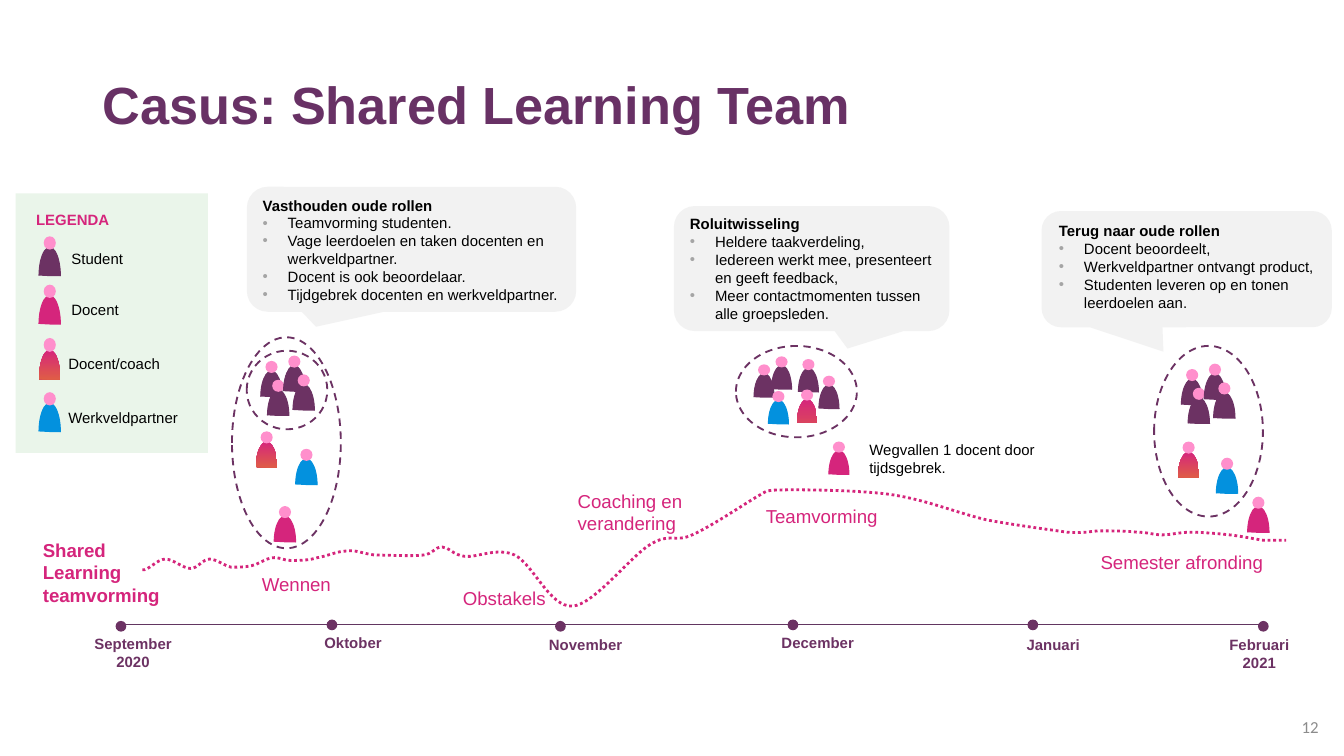
"""Build the Shared Learning Team case slide with its timeline, teams and legend."""
import copy

import lxml.etree
import pptx
import pptx.dml.color
import pptx.enum.dml
import pptx.enum.shapes
import pptx.enum.text
import pptx.oxml.ns
import pptx.util

COLORS = {
    "title": "683165", "plum": "6C3263", "axis": "623661", "pink": "D5257C",
    "coral": "DF5C47", "amber": "E99211", "blue": "0391DE", "head": "FF8FCC",
    "callout": "F2F2F2", "legend": "EAF5EA", "black": "000000",
    "bullet": "A5A5A5", "number": "8C8C8C",
}
RGB = {name: pptx.dml.color.RGBColor.from_string(value) for name, value in COLORS.items()}
SHAPES = pptx.enum.shapes.MSO_SHAPE
ALIGN = pptx.enum.text.PP_ALIGN
DASH = pptx.enum.dml.MSO_LINE

presentation = pptx.Presentation()
presentation.slide_width = pptx.util.Inches(10)
presentation.slide_height = pptx.util.Inches(5.625)
slide = presentation.slides.add_slide(presentation.slide_layouts[6])
cell = presentation.slide_width / 100


def add_shape(kind, box, fill=None, line=None, width=0.5, dash=None):
    """Add a preset shape; box is left, top, width, height in grid cells."""
    shape = slide.shapes.add_shape(kind, *(round(value * cell) for value in box))
    shape.shadow.inherit = False
    if fill:
        shape.fill.solid()
        shape.fill.fore_color.rgb = RGB[fill]
    else:
        shape.fill.background()
    if line:
        shape.line.color.rgb = RGB[line]
        shape.line.width = pptx.util.Pt(width)
        shape.line.dash_style = dash
    else:
        shape.line.fill.background()
    return shape


def add_text(text, box, size, color, bold=False, wrap=True, align=ALIGN.LEFT, font="Arial"):
    """Add a text box; box is left, top, width, height in grid cells."""
    frame = slide.shapes.add_textbox(*(round(value * cell) for value in box)).text_frame
    frame.text = text
    frame.word_wrap = wrap
    for paragraph in frame.paragraphs:
        paragraph.alignment = align
        for run in paragraph.runs:
            run.font.name = font
            run.font.size = pptx.util.Pt(size)
            run.font.bold = bold
            run.font.color.rgb = RGB[color]
    return frame


title = add_text("Casus: Shared Learning Team", (6.65, 3.3, 84.8, 9.4), 28, "title", bold=True)
title.paragraphs[0].line_spacing = 0.9
number = add_text("12", (90, 52.6, 9.1, 3), 9, "number", align=ALIGN.RIGHT, font="Calibri")
for frame in (title, number):
    frame.vertical_anchor = pptx.enum.text.MSO_ANCHOR.MIDDLE

callouts = [
    ((18.37, 13.9, 24.5, 9.3), (-0.29, 0.62), (18.56, 14.1, 24.3, 9.1),
     ["Vasthouden oude rollen", "Teamvorming studenten.",
      "Vage leerdoelen en taken docenten en werkveldpartner.",
      "Docent is ook beoordelaar.", "Tijdgebrek docenten en werkveldpartner."]),
    ((50.14, 15.34, 20.5, 9.3), (0.13, 0.64), (50.35, 15.5, 20.6, 9.1),
     ["Roluitwisseling", "Heldere taakverdeling,",
      "Iedereen werkt mee, presenteert en geeft feedback,",
      "Meer contactmomenten tussen alle groepsleden."]),
    ((77.5, 15.7, 21.6, 8.65), (-0.08, 0.71), (77.8, 16, 21.5, 7.7),
     ["Terug naar oude rollen", "Docent beoordeelt,",
      "Werkveldpartner ontvangt product,",
      "Studenten leveren op en tonen leerdoelen aan."]),
]
for balloon_box, tip, text_box, lines in callouts:
    balloon = add_shape(SHAPES.ROUNDED_RECTANGULAR_CALLOUT, balloon_box, "callout")
    balloon.adjustments[0], balloon.adjustments[1] = tip
    frame = add_text("\n".join(lines), text_box, 8, "black")
    frame.paragraphs[0].runs[0].font.bold = True
    for paragraph in frame.paragraphs[1:]:
        properties = paragraph._p.get_or_add_pPr()
        properties.set("marL", str(round(1.87 * cell)))
        properties.set("indent", str(round(-1.87 * cell)))
        bullet_color = lxml.etree.SubElement(properties, pptx.oxml.ns.qn("a:buClr"))
        lxml.etree.SubElement(bullet_color, pptx.oxml.ns.qn("a:srgbClr"), val=COLORS["bullet"])
        lxml.etree.SubElement(properties, pptx.oxml.ns.qn("a:buFont"), typeface="Arial")
        lxml.etree.SubElement(properties, pptx.oxml.ns.qn("a:buChar"), char="•")

axis = slide.shapes.add_connector(
    pptx.enum.shapes.MSO_CONNECTOR.STRAIGHT,
    *(round(value * cell) for value in (8.9, 46.5, 94.3, 46.5)))
axis.line.color.rgb = RGB["axis"]
axis.line.width = pptx.util.Pt(0.5)
lxml.etree.SubElement(axis._element.spPr, pptx.oxml.ns.qn("a:effectLst"))

months = [
    ("September 2020", 8.6, 46.2, (5.7, 46.7, 8.4, 3.7)),
    ("Oktober", 24.3, 46.1, (23.15, 46.64, 6.3, 2.4)),
    ("November", 41.3, 46.2, (39.86, 46.8, 7.5, 2.4)),
    ("December", 58.6, 46.1, (57.16, 46.64, 7.5, 2.4)),
    ("Januari", 76.45, 46.1, (75.4, 46.8, 6, 2.4)),
    ("Februari 2021", 93.6, 46.2, (90.3, 46.8, 6.8, 3.7)),
]
for month, left, top, box in months:
    add_shape(SHAPES.OVAL, (left, top, 0.8, 0.8), "plum")
    has_year = " " in month
    add_text(month, box, 8, "plum", bold=True, wrap=has_year,
             align=ALIGN.CENTER if has_year else ALIGN.LEFT)

add_shape(SHAPES.RECTANGLE, (1.17, 14.4, 14.3, 19.3), "legend")
add_text("LEGENDA", (1.7, 15.2, 7.5, 2.4), 8, "pink", bold=True, wrap=False)
for role, box in [("Student", (4.33, 18.1, 5.9, 2.4)), ("Docent", (4.33, 21.9, 5.6, 2.4)),
                  ("Docent/coach", (4.1, 25.9, 8.9, 2.4)),
                  ("Werkveldpartner", (4.1, 29.9, 10.6, 2.4))]:
    add_text(role, box, 8, "black", wrap=False)

student_places = [(0, 0.4), (0.5, 1.8), (1.7, 0), (2.4, 1.4)]
first_team = [("plum", 19.4 + left, 27.2 + top) for left, top in student_places]
last_team = [("plum", 87.9 + left, 27.8 + top) for left, top in student_places]
figure_groups = [
    (1.6, 3.9, 0.5,
     first_team + [("coach", 19.04, 32.84), ("pink", 20.4, 38.4), ("blue", 22, 34.14)]),
    (1.5, 3.6, 0.89,
     [("pink", 61.67, 33.54), ("plum", 56.1, 27.8), ("plum", 59.4, 27.4),
      ("plum", 60.93, 28.64), ("blue", 57.17, 29.78), ("plum", 57.4, 27.2),
      ("coach", 59.3, 29.67)]),
    (1.6, 3.9, 0.51,
     last_team + [("coach", 87.64, 33.6), ("blue", 90.5, 34.8), ("pink", 92.83, 37.7)]),
    (1.6, 4.3, 0.5, [("plum", 2.9, 18.4), ("pink", 2.9, 22), ("blue", 2.9, 30)]),
    (1.6, 4.5, 0.49, [("coach", 2.9, 26)]),
]
for width, height, middle_stop, figures in figure_groups:
    for role, left, top in figures:
        is_coach = role == "coach"
        body = add_shape(SHAPES.ARC, (left, top, width, height),
                         "pink" if is_coach else role, None if is_coach else role)
        body.adjustments[0], body.adjustments[1] = 109.81, 0
        if is_coach:
            body.fill.gradient()
            body.fill.gradient_angle = 270
            stop_list = body._element.xpath(".//a:gsLst")[0]
            stop_list.append(copy.deepcopy(stop_list[-1]))
            for stop, color, position in zip(
                    body.fill.gradient_stops, ("pink", "coral", "amber"), (0, middle_stop, 1)):
                stop.color.rgb = RGB[color]
                stop.position = position
        add_shape(SHAPES.OVAL, (left + width / 2 - 0.45, top - 0.19 * height, 0.9, 0.23 * height),
                  "head")

for box in [(17.26, 25.1, 8.1, 15.7), (18.36, 26.1, 6, 5.85),
            (54.76, 25.74, 9, 6.8), (85.87, 25.74, 8.1, 12.7)]:
    add_shape(SHAPES.OVAL, box, line="plum", width=1, dash=DASH.DASH)

curve_start = (10.6, 42.4)
curve_segments = [
    (11, 42.5, 11.7, 41.6, 12.3, 41.6), (12.9, 41.6, 13.6, 42.3, 14.2, 42.3),
    (14.7, 42.3, 15.1, 41.6, 15.6, 41.6), (16.1, 41.6, 16.7, 42.1, 17.2, 42.2),
    (17.7, 42.2, 18.2, 42.2, 18.7, 42.1), (19.2, 42, 19.7, 41.6, 20.2, 41.5),
    (20.7, 41.4, 21.1, 41.7, 21.6, 41.7), (22.2, 41.7, 23, 41.7, 23.6, 41.5),
    (24.3, 41.4, 25.1, 41, 25.8, 41), (26.5, 40.9, 27, 41.2, 27.9, 41.3),
    (28.9, 41.3, 30.6, 41.4, 31.5, 41.3), (32.3, 41.2, 32.3, 40.7, 32.9, 40.7),
    (33.4, 40.7, 33.7, 41.3, 34.6, 41.4), (35.5, 41.5, 37, 40.7, 38.3, 41.3),
    (39.7, 42, 40.9, 45.2, 42.6, 45.1), (44.2, 45, 46.9, 41.4, 48.4, 40.5),
    (49.9, 39.6, 50.2, 40.4, 51.5, 39.8), (52.9, 39.2, 56, 37.1, 56.6, 36.8),
    (57.1, 36.5, 57.1, 36.5, 57.3, 36.5), (57.5, 36.4, 63.6, 36.4, 66.3, 36.8),
    (69, 37.2, 71.3, 38.2, 73.5, 38.7), (75.7, 39.1, 78, 39.4, 79.4, 39.6),
    (80.9, 39.7, 81.1, 39.5, 81.9, 39.5), (82.8, 39.5, 83.8, 39.5, 84.6, 39.6),
    (85.4, 39.6, 85.8, 39.8, 86.5, 39.8), (87.1, 39.8, 87.8, 39.6, 88.6, 39.6),
    (89.4, 39.6, 90.6, 39.7, 91.5, 39.8), (92.4, 39.9, 93.3, 40.1, 94, 40.2),
    (94.7, 40.2, 95.3, 40.2, 95.7, 40.2),
]
builder = slide.shapes.build_freeform(*(value * cell for value in curve_start))
for segment in curve_segments:
    scaled = [value * cell for value in segment]
    builder.add_line_segments(list(zip(scaled[::2], scaled[1::2])), close=False)
mood_curve = builder.convert_to_shape()
straight_parts = mood_curve._element.xpath(".//a:lnTo")
outline = straight_parts[0].getparent()
for first in range(0, len(straight_parts), 3):
    bezier = lxml.etree.SubElement(outline, pptx.oxml.ns.qn("a:cubicBezTo"))
    for part in straight_parts[first:first + 3]:
        bezier.append(part[0])
        outline.remove(part)
mood_curve.shadow.inherit = False
mood_curve.fill.background()
mood_curve.line.color.rgb = RGB["pink"]
mood_curve.line.width = pptx.util.Pt(1.5)
mood_curve.line.dash_style = DASH.ROUND_DOT

for phase, box in [("Wennen", (18.5, 42.1, 9.8, 2.7)), ("Obstakels", (33.46, 43.2, 8.9, 2.7)),
                   ("Coaching en verandering", (42, 35.95, 11.6, 4.4)),
                   ("Teamvorming", (56, 37.1, 11.7, 2.7)),
                   ("Semester afronding", (80.9, 40.5, 16.2, 2.7))]:
    add_text(phase, box, 10, "pink")
add_text("Shared Learning teamvorming", (2.2, 39.6, 11.2, 6.1), 10, "pink", bold=True)
add_text("Wegvallen 1 docent door tijdsgebrek.", (63.7, 32.3, 15.7, 3.7), 8, "black")

presentation.save("out.pptx")
